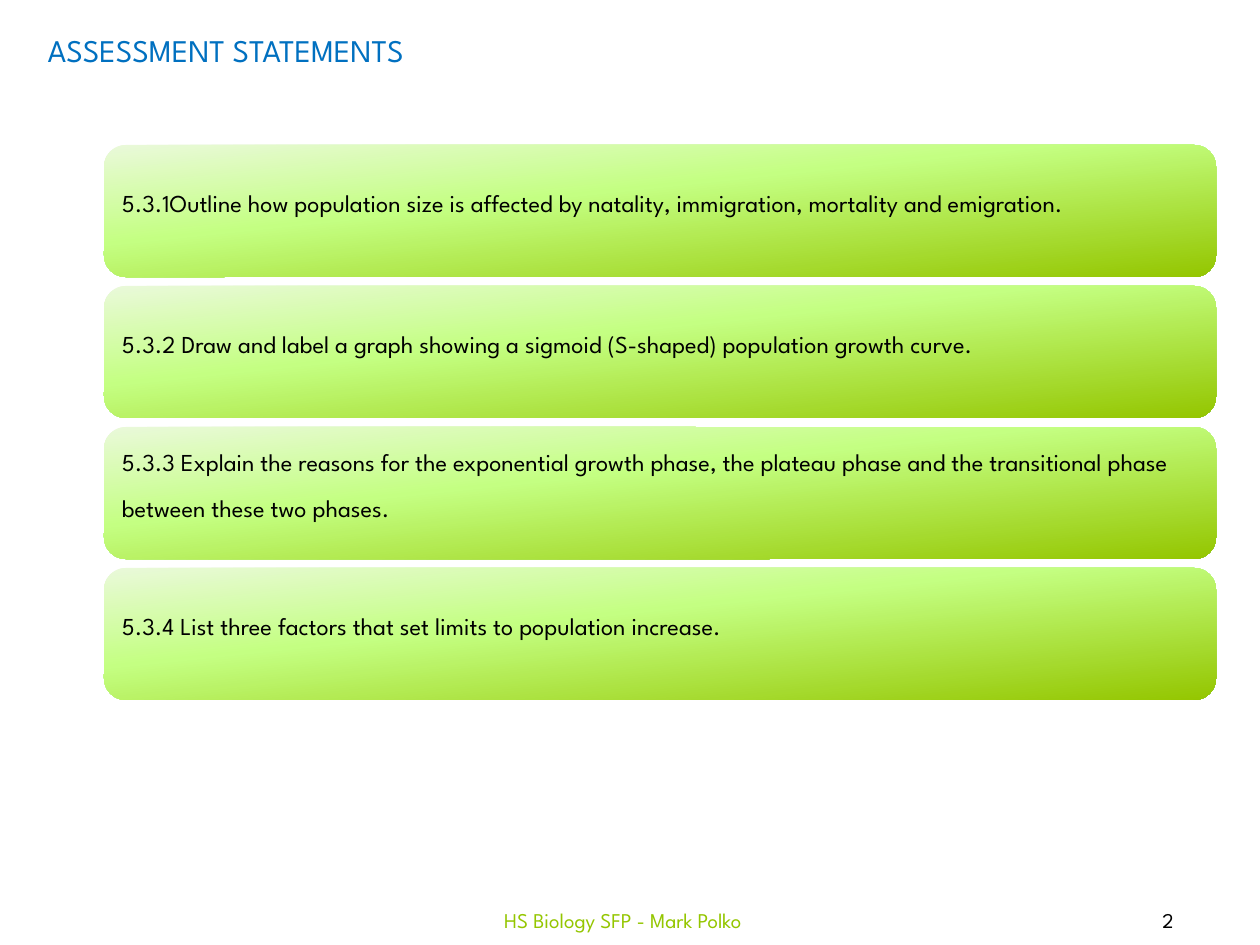
from copy import deepcopy

from pptx import Presentation
from pptx.dml.color import RGBColor
from pptx.enum.shapes import MSO_SHAPE
from pptx.enum.text import MSO_ANCHOR, MSO_AUTO_SIZE, PP_ALIGN
from pptx.util import Pt

ROUND = MSO_SHAPE.ROUNDED_RECTANGLE
TOP, MIDDLE = MSO_ANCHOR.TOP, MSO_ANCHOR.MIDDLE
LEFT, CENTER = PP_ALIGN.LEFT, PP_ALIGN.CENTER
FIT = MSO_AUTO_SIZE.SHAPE_TO_FIT_TEXT

BLACK = RGBColor(0x00, 0x00, 0x00)
BLUE = RGBColor(0x00, 0x70, 0xC0)
PALE = RGBColor(0xEA, 0xF9, 0xDA)
LIME = RGBColor(0xC4, 0xFF, 0x82)
GREEN = RGBColor(0x94, 0xC6, 0x00)

FONT = "League Spartan"
STOPS = [(0, PALE), (0.4, LIME), (1, GREEN)]
EMU = 914400 / 126

STATEMENTS = [
    "5.3.1Outline how population size is affected by natality, "
    "immigration, mortality and emigration.",
    "5.3.2 Draw and label a graph showing a sigmoid (S-shaped) "
    "population growth curve.",
    "5.3.3 Explain the reasons for the exponential growth phase, the plateau "
    "phase and the transitional phase between these two phases.",
    "5.3.4 List three factors that set limits to population increase.",
]


def px(*sizes):
    return [round(size * EMU) for size in sizes]


def write(shape, text, size=12, color=BLACK, align=LEFT, anchor=MIDDLE,
          wrap=True, inset=None, line=None, after=None, base=None):
    frame = shape.text_frame
    frame.word_wrap = wrap
    frame.vertical_anchor = anchor
    if inset is not None:
        frame.margin_left, frame.margin_top = px(inset, inset)
        frame.margin_right, frame.margin_bottom = px(inset, inset)
    para = frame.paragraphs[0]
    para.alignment = align
    para.line_spacing = line
    para.space_after = after
    run = para.add_run()
    run.text = text
    run.font.name = FONT
    run.font.size = Pt(size)
    run.font.color.rgb = color
    if base:
        run.font._element.set("baseline", str(base * 1000))


def shade(shape):
    """Fill with the three-stop green gradient."""
    fill = shape.fill
    fill.gradient()
    fill.gradient_angle = 360 - 84
    stops = shape._element.spPr.gradFill.gsLst
    stops.append(deepcopy(stops[-1]))
    for stop, (place, color) in zip(fill.gradient_stops, STOPS):
        stop.position = place
        stop.color.rgb = color


def add_title(slide, left, top, width, height):
    title = slide.shapes.title
    title.left, title.top, title.width, title.height = px(
        left, top, width, height)
    write(title, "ASSESSMENT STATEMENTS", size=18, color=BLUE,
          anchor=TOP, wrap=False)
    title.text_frame.auto_size = FIT


def add_card(group, text, left, top, width, height):
    card = group.shapes.add_shape(ROUND, *px(left, top, width, height))
    card.shadow.inherit = False
    card.line.fill.background()
    shade(card)
    label = group.shapes.add_textbox(
        *px(left + 6, top + 7, width - 12, height - 13))
    write(label, text, size=24, inset=12, line=0.9, after=Pt(8.4), base=30)


def add_cards(slide, left, top, width, height, gap):
    group = slide.shapes.add_group_shape()
    for row, text in enumerate(STATEMENTS):
        add_card(group, text, left, top + row * (height + gap), width, height)


def add_footer(slide, top, height):
    number = slide.shapes.add_textbox(*px(1076, top, 184, height))
    write(number, "2", align=CENTER)
    credit = slide.shapes.add_textbox(*px(382, top, 482, height))
    write(credit, "HS Biology SFP - Mark Polko", color=GREEN, align=CENTER)


def main():
    deck = Presentation()
    deck.slide_width, deck.slide_height = px(1260, 945)
    slide = deck.slides.add_slide(deck.slide_layouts[5])
    add_footer(slide, 895, 50)
    add_title(slide, 35, 25, 404, 50)
    add_cards(slide, 104, 145, 1112, 132, 9)
    deck.save("out.pptx")


if __name__ == "__main__":
    main()
